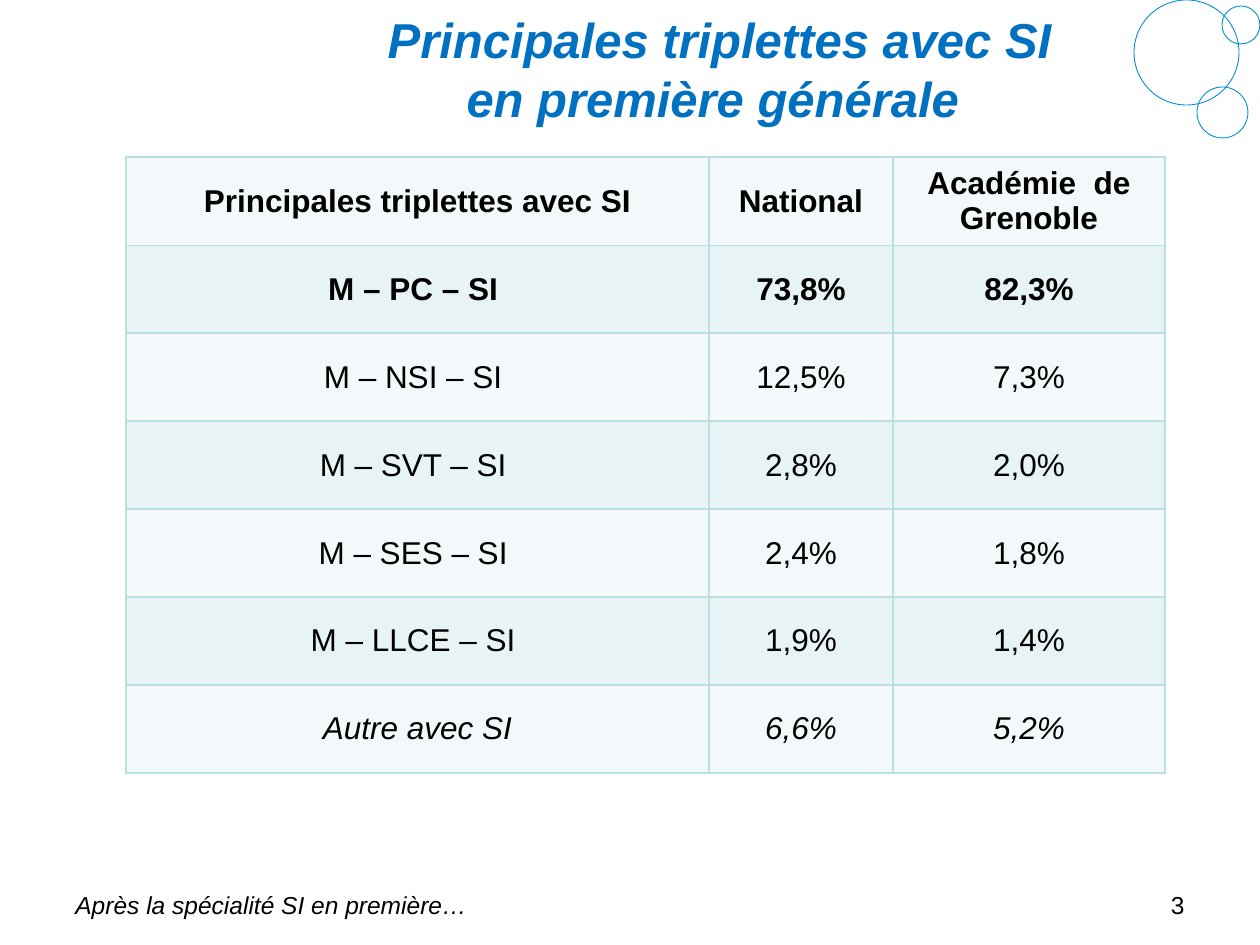
from lxml.etree import SubElement
from pptx import Presentation
from pptx.dml.color import RGBColor
from pptx.enum.shapes import MSO_SHAPE as Shape
from pptx.enum.text import MSO_ANCHOR as Anchor, PP_ALIGN as Align
from pptx.oxml.ns import qn
from pptx.util import Emu, Pt

TITLE = ["Principales triplettes avec SI", "en première générale "]
FOOT = "Après la spécialité SI en première…"
PAGE = "3"
ROWS = [
    ("Principales triplettes avec SI", "National", "Académie  de Grenoble"),
    ("M – PC – SI ", "73,8%", "82,3%"),
    ("M – NSI – SI ", "12,5%", "7,3%"),
    ("M – SVT – SI ", "2,8%", "2,0%"),
    ("M – SES – SI ", "2,4%", "1,8%"),
    ("M – LLCE – SI ", "1,9%", "1,4%"),
    ("Autre avec SI", "6,6%", "5,2%"),
]
COLS = [583, 184, 272]
ROW_H = 88
FILLS = ["F3F9FA", "E7F3F4"]
EDGE = "BBE0E3"
RINGS = [(1134, 0, 105), (1222, 6, 38), (1197, 87, 51)]


def px(n):
    return Emu(round(n * 914400 / 126))


def color(code):
    return RGBColor.from_string(code)


def write(para, lines, size, align, tint="000000", bold=False, slant=False):
    para.alignment = align
    for i, line in enumerate(lines):
        if i:
            para.add_line_break()
        run = para.add_run()
        run.text = line
        font = run.font
        font.name, font.size = "Arial", Pt(size)
        font.bold, font.italic = bold, slant
        font.color.rgb = color(tint)


def add_text(slide, spot, lines, anchor, *style, **looks):
    frame = slide.shapes.add_textbox(*map(px, spot)).text_frame
    frame.word_wrap = True
    frame.vertical_anchor = anchor
    write(frame.paragraphs[0], lines, *style, **looks)


def add_ring(slide, left, top, size):
    ring = slide.shapes.add_shape(Shape.OVAL, *map(px, (left, top, size, size)))
    ring.shadow.inherit = False
    ring.fill.background()
    ring.line.color.rgb = color("008ED1")
    ring.line.width = Pt(0.5)


def paint(cell, code):
    props = cell._tc.get_or_add_tcPr()
    for side in ("a:lnL", "a:lnR", "a:lnT", "a:lnB"):
        line = SubElement(props, qn(side), w=str(Pt(1)))
        fill = SubElement(line, qn("a:solidFill"))
        SubElement(fill, qn("a:srgbClr"), val=EDGE)
    cell.fill.solid()
    cell.fill.fore_color.rgb = color(code)


def add_grid(slide):
    spot = (126, 157, sum(COLS), ROW_H * len(ROWS))
    grid = slide.shapes.add_table(len(ROWS), len(COLS), *map(px, spot)).table
    for col, width in zip(grid.columns, COLS):
        col.width = px(width)
    for r, row in enumerate(ROWS):
        grid.rows[r].height = px(ROW_H)
        for c, text in enumerate(row):
            cell = grid.cell(r, c)
            cell.vertical_anchor = Anchor.MIDDLE
            paint(cell, FILLS[r % 2])
            write(cell.text_frame.paragraphs[0], [text], 18, Align.CENTER,
                  bold=r < 2, slant=r == len(ROWS) - 1)


def main():
    deck = Presentation()
    deck.slide_width, deck.slide_height = px(1260), px(945)
    slide = deck.slides.add_slide(deck.slide_layouts[6])
    for ring in RINGS:
        add_ring(slide, *ring)
    add_text(slide, (242, 1, 955, 135), TITLE, Anchor.MIDDLE, 28, Align.CENTER,
             tint="0070C0", bold=True, slant=True)
    add_text(slide, (63, 861, 924, 65), [FOOT], Anchor.BOTTOM, 14, Align.LEFT,
             slant=True)
    add_text(slide, (1008, 861, 189, 65), [PAGE], Anchor.BOTTOM, 14, Align.RIGHT)
    add_grid(slide)
    deck.save("out.pptx")


if __name__ == "__main__":
    main()
